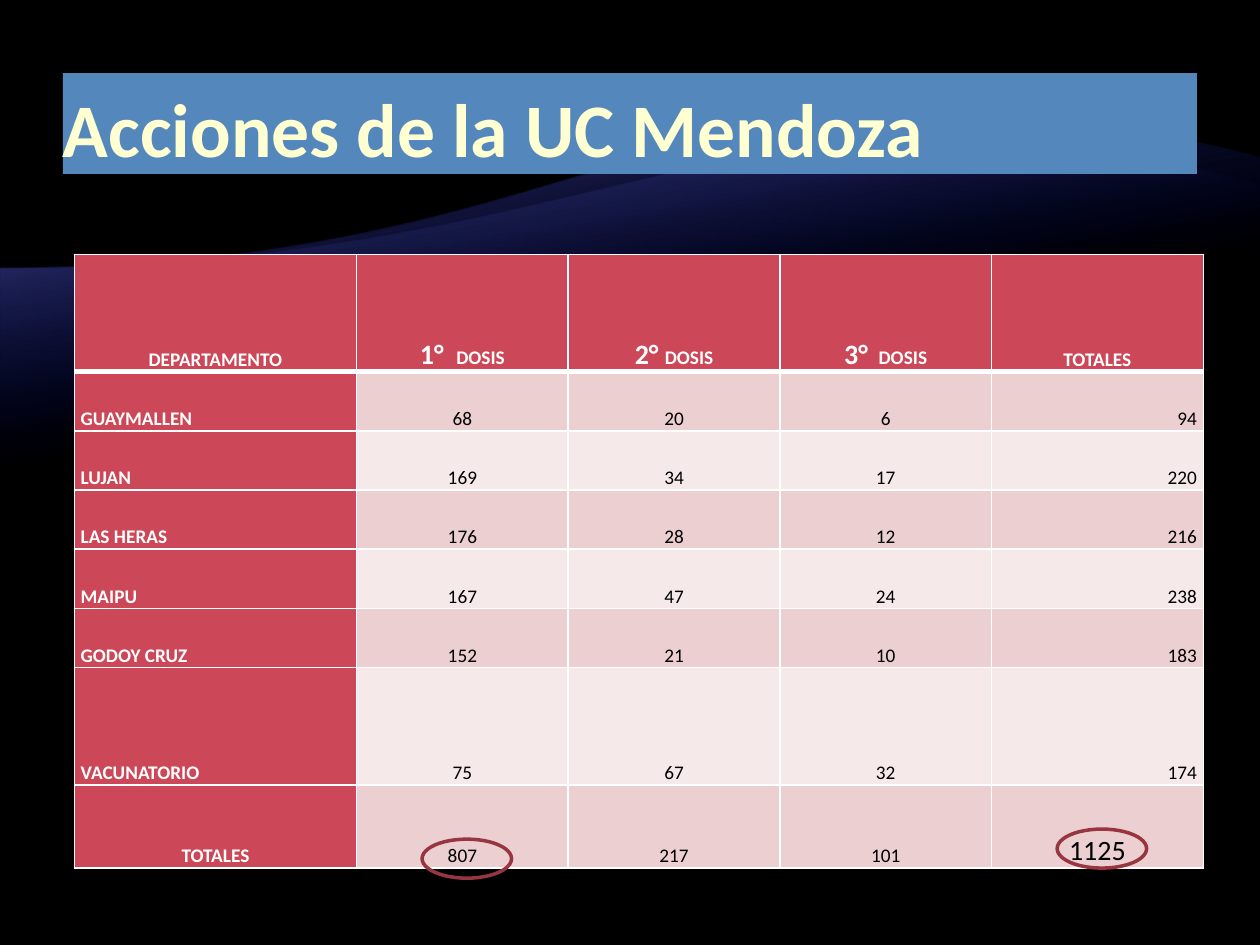
from lxml import etree
from pptx import Presentation
from pptx.dml.color import RGBColor
from pptx.enum.shapes import MSO_SHAPE
from pptx.enum.text import MSO_ANCHOR, PP_ALIGN
from pptx.oxml import parse_xml
from pptx.oxml.ns import nsdecls, qn
from pptx.util import Inches, Pt

RECT, OVAL = MSO_SHAPE.RECTANGLE, MSO_SHAPE.OVAL
BOTTOM = MSO_ANCHOR.BOTTOM
LEFT, CENTER, RIGHT = PP_ALIGN.LEFT, PP_ALIGN.CENTER, PP_ALIGN.RIGHT

FONT = "Calibri"
COLORS = {
    "background": "000000",
    "wave_base": "000D9E",
    "wave_back": "797FFF",
    "wave_front": "A3A7FF",
    "banner": "5488BC",
    "title": "FFFFD2",
    "header": "CC4757",
    "band_dark": "ECCFD1",
    "band_light": "F6E9EA",
    "white": "FFFFFF",
    "black": "000000",
    "ring": "973540",
}
HEADERS = [
    [("DEPARTAMENTO", 11)],
    [("1°  ", 16), ("DOSIS", 11)],
    [("2° ", 16), ("DOSIS", 11)],
    [("3° ", 16), (" DOSIS", 11)],
    [("TOTALES", 11)],
]
DOSES = [
    ("GUAYMALLEN", 68, 20, 6, 94),
    ("LUJAN", 169, 34, 17, 220),
    ("LAS HERAS", 176, 28, 12, 216),
    ("MAIPU", 167, 47, 24, 238),
    ("GODOY CRUZ", 152, 21, 10, 183),
    ("VACUNATORIO", 75, 67, 32, 174),
    ("TOTALES", 807, 217, 101, 1125),
]
COL_WIDTHS = [2.24] + [1.68] * 4
ROW_HEIGHTS = [0.93] + [0.47] * 5 + [0.93, 0.66]


def rgb(name):
    return RGBColor.from_string(COLORS[name])


def bezier(points, steps=40):
    p0, p1, p2, p3 = points
    for i in range(steps + 1):
        t = i / steps
        u = 1 - t
        yield tuple(
            u**3 * a + 3 * u**2 * t * b + 3 * u * t**2 * c + t**3 * d
            for a, b, c, d in zip(p0, p1, p2, p3)
        )


def add_wave(slide, crest, bottom, color, opacity):
    outline = [(Inches(x), Inches(y)) for x, y in bezier(crest)]
    outline += [(Inches(10), Inches(bottom)), (Inches(0), Inches(bottom))]
    builder = slide.shapes.build_freeform(*outline[0])
    builder.add_line_segments(outline[1:], close=True)
    sp = builder.convert_to_shape()
    sp.shadow.inherit = False
    sp.line.fill.background()
    gradient = parse_xml(
        f'<a:gradFill {nsdecls("a")} rotWithShape="1"><a:gsLst>'
        f'<a:gs pos="65000"><a:srgbClr val="{COLORS["wave_base"]}">'
        f'<a:alpha val="0"/></a:srgbClr></a:gs>'
        f'<a:gs pos="100000"><a:srgbClr val="{COLORS[color]}">'
        f'<a:alpha val="{opacity * 1000}"/></a:srgbClr></a:gs>'
        f'</a:gsLst><a:lin ang="{260 * 60000}" scaled="0"/></a:gradFill>'
    )
    sp._element.spPr.find(qn("a:custGeom")).addnext(gradient)


def add_background(slide):
    slide.background.fill.solid()
    slide.background.fill.fore_color.rgb = rgb("background")
    add_wave(slide, [(0, 2.13), (5, 2.13), (5.34, 0.05), (10, 1.25)],
             7.33, "wave_back", 55)
    add_wave(slide, [(0, 2.13), (5, 2.13), (5.98, 0.31), (10, 1.47)],
             6.37, "wave_front", 30)


def add_title(slide, left, top, width, height):
    sp = slide.shapes.add_shape(
        RECT, Inches(left), Inches(top), Inches(width), Inches(height))
    sp.shadow.inherit = False
    sp.fill.solid()
    sp.fill.fore_color.rgb = rgb("banner")
    sp.line.fill.background()
    tf = sp.text_frame
    tf.word_wrap = True
    tf.vertical_anchor = BOTTOM
    tf.margin_left = tf.margin_right = 0
    tf.margin_top = tf.margin_bottom = Inches(0.01)
    p = tf.paragraphs[0]
    p.text = "Acciones de la UC Mendoza"
    p.alignment = LEFT
    p.font.name = FONT
    p.font.size = Pt(43.2)
    p.font.bold = True
    p.font.color.rgb = rgb("title")


def set_borders(cell, widths):
    tc_pr = cell._tc.get_or_add_tcPr()
    for side, width in zip("LRTB", widths):
        ln = etree.SubElement(tc_pr, qn(f"a:ln{side}"), w=str(Pt(width)))
        fill = etree.SubElement(ln, qn("a:solidFill"))
        etree.SubElement(fill, qn("a:srgbClr"), val=COLORS["white"])


def fill_cell(cell, runs, fill, color, bold, alignment, borders):
    set_borders(cell, borders)
    cell.fill.solid()
    cell.fill.fore_color.rgb = rgb(fill)
    cell.vertical_anchor = BOTTOM
    cell.margin_left = cell.margin_right = Inches(0.05)
    cell.margin_top = cell.margin_bottom = 0
    p = cell.text_frame.paragraphs[0]
    p.alignment = alignment
    p.line_spacing = 1.15
    p.font.name = FONT
    p.font.bold = bold
    p.font.color.rgb = rgb(color)
    for text, size in runs:
        r = p.add_run()
        r.text = text
        r.font.size = Pt(size)


def add_dose_table(slide, left, top, width, height):
    rows = HEADERS, *DOSES
    table = slide.shapes.add_table(
        len(rows), len(HEADERS), Inches(left), Inches(top),
        Inches(width), Inches(height)).table
    for column, w in zip(table.columns, COL_WIDTHS):
        column.width = Inches(w)
    for row, h in zip(table.rows, ROW_HEIGHTS):
        row.height = Inches(h)

    last_row, last_col = len(rows) - 1, len(HEADERS) - 1
    for i, values in enumerate(rows):
        borders = (1, 1, 3 if i == 1 else 1, 3 if i == 0 else 1)
        for j, value in enumerate(values):
            heading = i == 0 or j == 0
            band = "band_dark" if i % 2 else "band_light"
            grand_total = i == last_row and j == last_col
            runs = value if i == 0 else [(str(value), 16 if grand_total else 11)]
            alignment = CENTER
            if 0 < i < last_row:
                alignment = {0: LEFT, last_col: RIGHT}.get(j, CENTER)
            fill_cell(table.cell(i, j), runs, "header" if heading else band,
                      "white" if heading else "black", heading, alignment,
                      borders)


def add_ring(slide, left, top, width, height):
    sp = slide.shapes.add_shape(
        OVAL, Inches(left), Inches(top), Inches(width), Inches(height))
    sp.shadow.inherit = False
    sp.fill.background()
    sp.line.color.rgb = rgb("ring")
    sp.line.width = Pt(2)


def main():
    prs = Presentation()
    prs.slide_width, prs.slide_height = Inches(10), Inches(7.5)
    slide = prs.slides.add_slide(prs.slide_layouts[6])
    add_background(slide)
    add_title(slide, 0.5, 0.58, 9, 0.8)
    add_dose_table(slide, 0.59, 2.02, 8.98, 4.88)
    for left, top in [(3.35, 6.66), (8.39, 6.58)]:
        add_ring(slide, left, top, 0.71, 0.31)
    prs.save("out.pptx")


if __name__ == "__main__":
    main()
